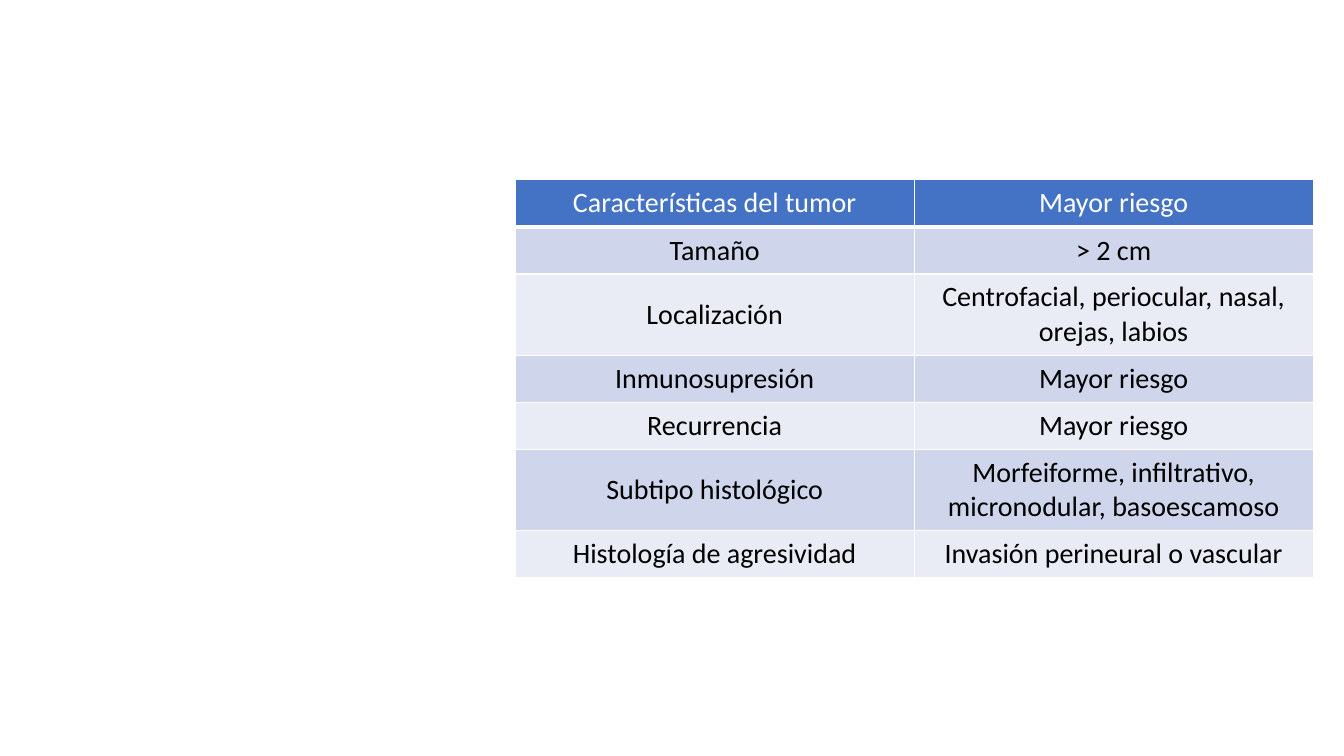
from lxml import etree
from pptx import Presentation
from pptx.dml.color import RGBColor
from pptx.enum.text import MSO_ANCHOR, PP_ALIGN
from pptx.oxml.ns import qn
from pptx.util import Pt

ROWS = [
    ("Características del tumor", "Mayor riesgo"),
    ("Tamaño", "> 2 cm"),
    ("Localización", "Centrofacial, periocular, nasal, orejas, labios"),
    ("Inmunosupresión", "Mayor riesgo"),
    ("Recurrencia", "Mayor riesgo"),
    ("Subtipo histológico", "Morfeiforme, infiltrativo, micronodular, basoescamoso"),
    ("Histología de agresividad", "Invasión perineural o vascular"),
]
TWO_LINE_ROWS = {2, 5}
HEADER_FILL = "4472C4"
BAND_FILLS = ("E9EBF5", "CFD5EA")
WHITE, BLACK = "FFFFFF", "000000"
LEFT, TOP, COL_W = 368, 128.5, 285
ROW_H, TALL_ROW_H = 33.6, 58
CENTER, MIDDLE = PP_ALIGN.CENTER, MSO_ANCHOR.MIDDLE


def rgb(color):
    return RGBColor.from_string(color)


def write(tf, text, size=20, font="Calibri", color=BLACK, align=CENTER):
    p = tf.paragraphs[0]
    p.alignment = align
    r = p.add_run()
    r.text = text
    r.font.size = Pt(size)
    r.font.name = font
    r.font.bold = False
    r.font.color.rgb = rgb(color)


def set_borders(cell, bottom):
    tc_pr = cell._tc.get_or_add_tcPr()
    widths = {"a:lnL": 1, "a:lnR": 1, "a:lnT": 1, "a:lnB": bottom}
    for i, (tag, width) in enumerate(widths.items()):
        ln = etree.Element(qn(tag), w=str(Pt(width)))
        fill = etree.SubElement(ln, qn("a:solidFill"))
        etree.SubElement(fill, qn("a:srgbClr"), val=WHITE)
        tc_pr.insert(i, ln)


def main():
    prs = Presentation()
    prs.slide_width, prs.slide_height = Pt(960), Pt(540)
    s = prs.slides.add_slide(prs.slide_layouts[6])

    heights = [TALL_ROW_H if i in TWO_LINE_ROWS else ROW_H for i in range(len(ROWS))]
    n_cols = len(ROWS[0])
    frame = s.shapes.add_table(len(ROWS), n_cols, Pt(LEFT), Pt(TOP),
                               Pt(COL_W * n_cols), Pt(sum(heights)))
    table = frame.table
    table.horz_banding = False
    for col in table.columns:
        col.width = Pt(COL_W)
    for i, texts in enumerate(ROWS):
        table.rows[i].height = Pt(heights[i])
        header = i == 0
        for j, text in enumerate(texts):
            cell = table.cell(i, j)
            cell.vertical_anchor = MIDDLE
            cell.fill.solid()
            cell.fill.fore_color.rgb = rgb(HEADER_FILL if header else BAND_FILLS[i % 2])
            set_borders(cell, bottom=3 if header else 1)
            write(cell.text_frame, text, color=WHITE if header else BLACK)

    prs.save("out.pptx")


if __name__ == "__main__":
    main()
